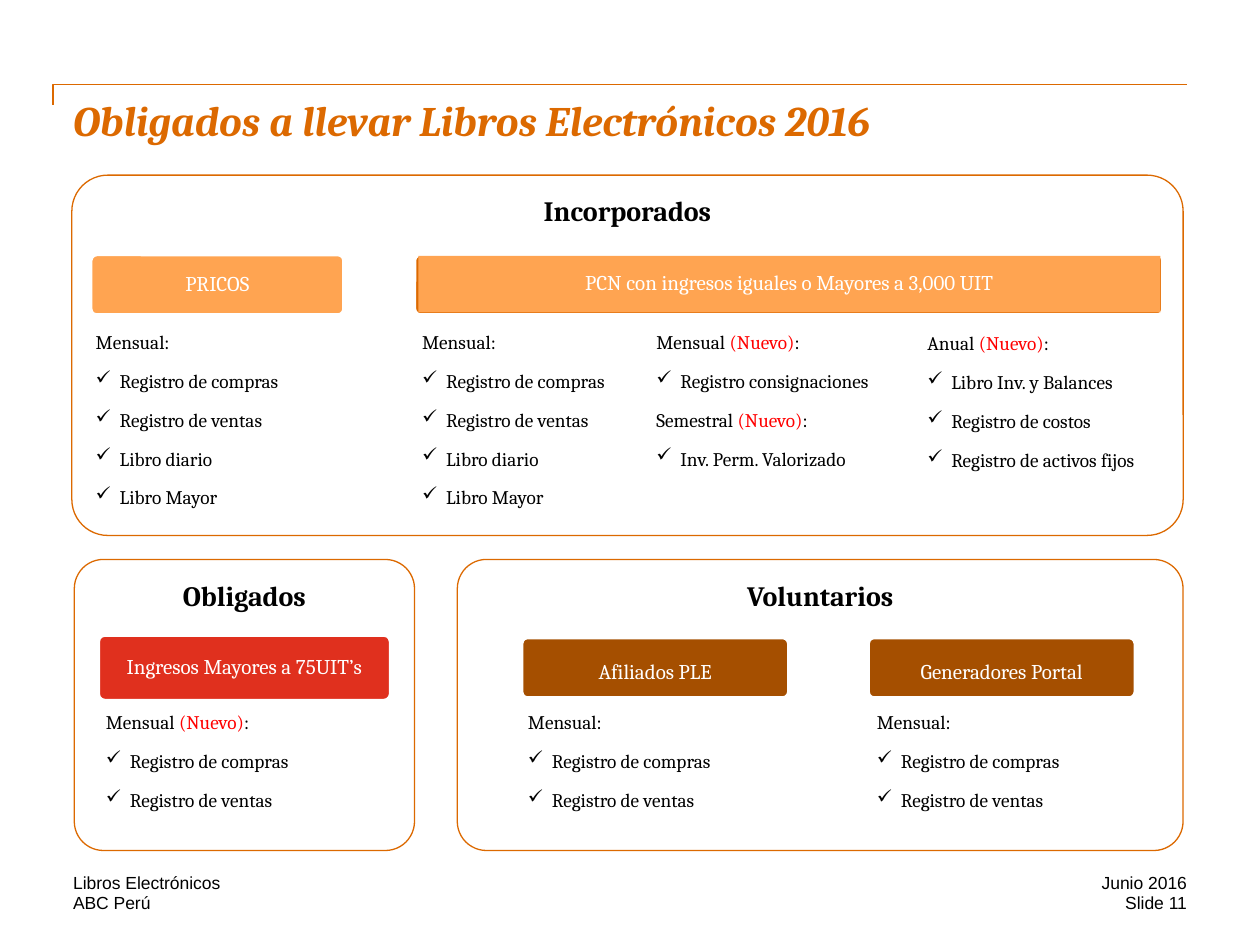
from lxml import etree
from pptx import Presentation
from pptx import util as u
from pptx.dml.color import RGBColor
from pptx.enum import shapes, text
from pptx.oxml.ns import qn

PX = 9144  # 100 px to the inch
THEME = {
    "serif": "Cambria", "sans": "Arial",
    "orange": "DC6900", "light": "FFA451", "brown": "A54F00", "red": "E0301E",
    "new": "FF0000", "black": "000000", "white": "FFFFFF",
    "title": 24, "heading": 16, "bar": 12, "list": 11, "footer": 10,
}
ROUND, RECT = shapes.MSO_SHAPE.ROUNDED_RECTANGLE, shapes.MSO_SHAPE.RECTANGLE
LEFT, CENTER, RIGHT = text.PP_ALIGN.LEFT, text.PP_ALIGN.CENTER, text.PP_ALIGN.RIGHT
TOP, MIDDLE, BOTTOM = text.MSO_ANCHOR.TOP, text.MSO_ANCHOR.MIDDLE, text.MSO_ANCHOR.BOTTOM

prs = Presentation()
prs.slide_width, prs.slide_height = 1000 * PX, 750 * PX
s = prs.slides.add_slide(prs.slide_layouts[5])


def write(sp, paragraphs, size, color="black", font="serif", align=LEFT,
          anchor=TOP, bold=False, spacing=None):
    """Fill a shape with paragraphs, each a list of (text, colour or None) runs."""
    tf = sp.text_frame
    tf.word_wrap = True
    tf.auto_size = text.MSO_AUTO_SIZE.NONE
    tf.vertical_anchor = anchor
    tf.margin_left = tf.margin_right = tf.margin_top = tf.margin_bottom = 0
    for i, runs in enumerate(paragraphs):
        p = tf.paragraphs[0] if i == 0 else tf.add_paragraph()
        p.alignment = align
        p.line_spacing = spacing
        for words, own in runs:
            r = p.add_run()
            r.text = words
            r.font.name, r.font.size = THEME[font], u.Pt(THEME[size])
            r.font.bold = bold
            r.font.color.rgb = RGBColor.from_string(THEME[own or color])
    return tf


def block(kind, box, fill=None, line=None, width=0.75):
    """Add a preset shape with an optional fill and outline."""
    sp = s.shapes.add_shape(kind, *(v * PX for v in box))
    sp.shadow.inherit = False
    if kind == ROUND:
        sp.adjustments[0] = 0.1
    if fill:
        sp.fill.solid()
        sp.fill.fore_color.rgb = RGBColor.from_string(THEME[fill])
    else:
        sp.fill.background()
    if line:
        sp.line.color.rgb = RGBColor.from_string(THEME[line])
        sp.line.width = u.Pt(width)
    else:
        sp.line.fill.background()
    return sp


# Rule above the title
fb = s.shapes.build_freeform(42, 83, scale=PX)
fb.add_line_segments([(42, 67), (942, 67)], close=False)
rule = fb.convert_to_shape()
rule.shadow.inherit = False
rule.fill.background()
rule.line.color.rgb = RGBColor.from_string(THEME["orange"])
rule.line.width = u.Pt(1)

# Title
title = s.shapes.title
title.left, title.top, title.width, title.height = (v * PX for v in (58, 75, 883, 100))
tf = write(title, [[("Obligados a llevar Libros Electrónicos 2016", None)]],
           "title", "orange", bold=True)
tf.paragraphs[0].runs[0].font.italic = True

# Panels with their headings
panels = [
    ("Incorporados", (57, 139, 882, 286), 59),
    ("Obligados", (59, 444, 270, 231), 61),
    ("Voluntarios", (363, 444, 576, 231), 61),
]
for name, box, heading_height in panels:
    block(ROUND, box, line="orange")
    x, y, w, h = box
    sp = s.shapes.add_textbox(x * PX, y * PX, w * PX, heading_height * PX)
    write(sp, [[(name, None)]], "heading", align=CENTER, anchor=MIDDLE,
          bold=True, spacing=0.9)

# Coloured bars; the last value pushes the label down
block(ROUND, (329, 202, 594, 48), "orange", "white", 2)
bars = [
    ("PRICOS", ROUND, (72, 202, 201, 48), "light", 0),
    ("PCN con ingresos iguales o Mayores a 3,000 UIT", RECT, (332, 203, 589, 45), "light", 0),
    ("Ingresos Mayores a 75UIT’s", ROUND, (78, 504, 232, 52), "red", 0),
    ("Afiliados PLE", ROUND, (414, 506, 212, 48), "brown", 7),
    ("Generadores Portal", ROUND, (689, 506, 212, 48), "brown", 7),
]
for label, kind, box, fill, drop in bars:
    sp = block(kind, box, fill, "white" if kind == ROUND else None, 2)
    tf = write(sp, [[(label, None)]], "bar", "white", align=CENTER,
               anchor=MIDDLE, spacing=0.9)
    tf.margin_top = drop * PX

# Check lists: a period, whether it is new, and its books
basic = ["Registro de compras", "Registro de ventas"]
full = basic + ["Libro diario", "Libro Mayor"]
lists = [
    ((76, 262, 169, 113), [("Mensual", False, full)]),
    ((335, 262, 169, 113), [("Mensual", False, full)]),
    ((521, 262, 186, 112), [("Mensual", True, ["Registro consignaciones"]),
                            ("Semestral", True, ["Inv. Perm. Valorizado"])]),
    ((736, 263, 186, 112), [("Anual", True, ["Libro Inv. y Balances", "Registro de costos",
                                             "Registro de activos fijos"])]),
    ((84, 564, 225, 71), [("Mensual", True, basic)]),
    ((419, 564, 206, 65), [("Mensual", False, basic)]),
    ((696, 564, 206, 65), [("Mensual", False, basic)]),
]
for box, groups in lists:
    paragraphs, checked = [], []
    for period, is_new, books in groups:
        if is_new:
            paragraphs.append([(period + " ", None), ("(Nuevo)", "new"), (":", None)])
        else:
            paragraphs.append([(period + ":", None)])
        paragraphs += [[(book, None)] for book in books]
        checked += [False] + [True] * len(books)
    sp = s.shapes.add_textbox(*(v * PX for v in box))
    tf = write(sp, paragraphs, "list")
    for p, check in zip(tf.paragraphs, checked):
        p.space_after = u.Pt(9)
        if check:
            pPr = p._p.get_or_add_pPr()
            pPr.set("marL", str(19 * PX))
            pPr.set("indent", str(-19 * PX))
            etree.SubElement(pPr, qn("a:buChar")).set("char", "✓")

# Footer
footers = [
    ("Libros Electrónicos", (58, 692, 575, 17), LEFT, BOTTOM),
    ("ABC Perú", (58, 708, 283, 17), LEFT, TOP),
    ("Junio 2016", (775, 692, 167, 17), RIGHT, TOP),
    ("Slide 11", (775, 708, 167, 17), RIGHT, TOP),
]
for words, box, align, anchor in footers:
    sp = s.shapes.add_textbox(*(v * PX for v in box))
    write(sp, [[(words, None)]], "footer", font="sans", align=align, anchor=anchor)

prs.save("out.pptx")
